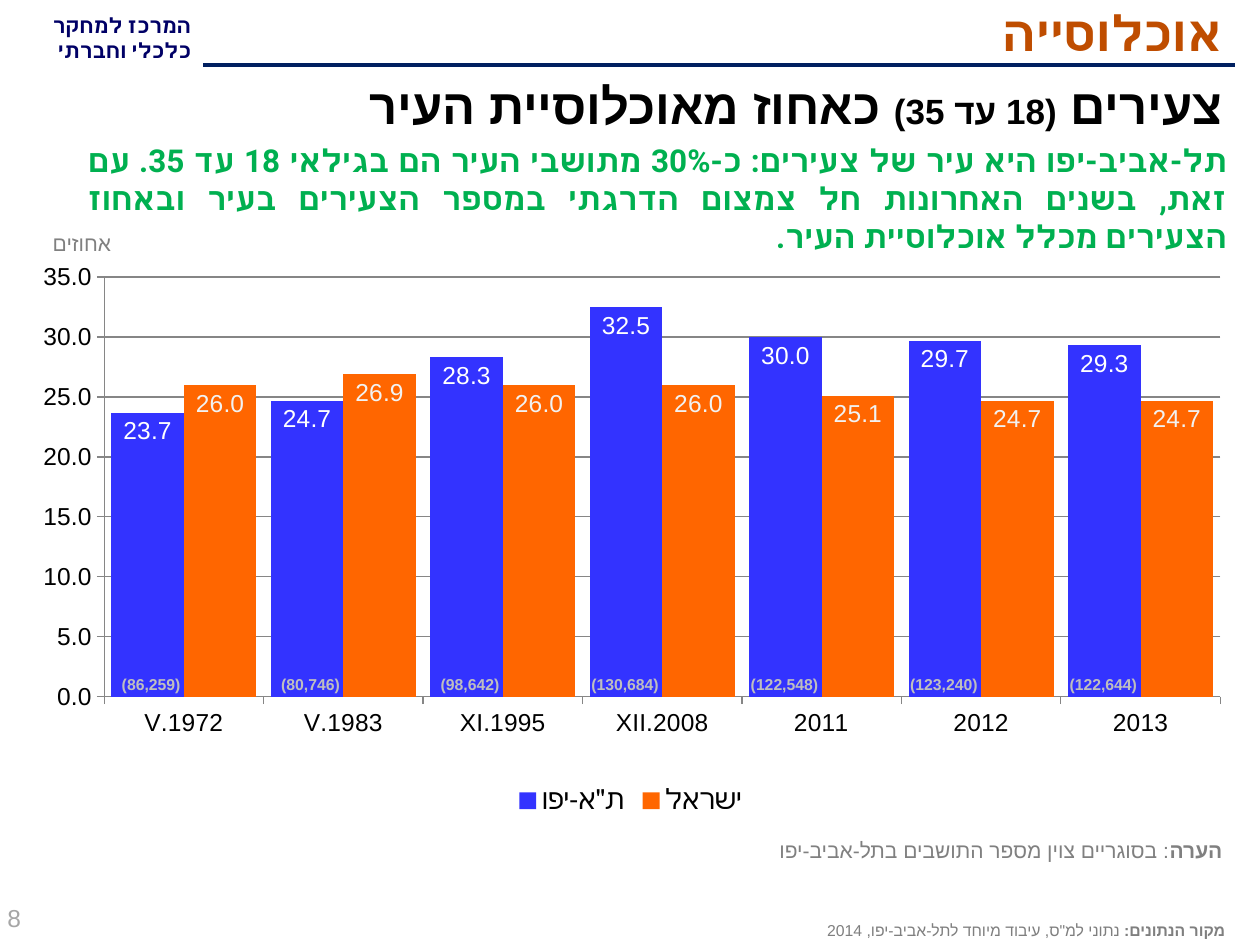
from dataclasses import dataclass

from lxml.etree import SubElement
from pptx import Presentation
from pptx.chart.data import CategoryChartData
from pptx.dml.color import RGBColor
from pptx.enum.chart import XL_CHART_TYPE, XL_LABEL_POSITION, XL_LEGEND_POSITION, XL_TICK_MARK
from pptx.enum.shapes import MSO_CONNECTOR
from pptx.enum.text import MSO_ANCHOR, PP_ALIGN
from pptx.oxml import parse_xml
from pptx.oxml.ns import nsdecls, qn
from pptx.util import Pt


@dataclass(frozen=True)
class Theme:
    body_font: str = "Arial"
    brand_font: str = "Roboto"
    black: str = "000000"
    white: str = "FFFFFF"
    navy: str = "000066"
    rule: str = "002060"
    title: str = "BF4D00"
    green: str = "00B050"
    city: str = "3333FF"
    country: str = "FF6600"
    country_label: str = "F2F2F2"
    count: str = "BFBFBF"
    note: str = "808080"
    source: str = "7F7F7F"
    page: str = "A6A6A6"
    axis: str = "868686"
    heading_size: int = 28
    range_size: int = 20
    message_size: int = 18
    legend_size: int = 16
    chart_size: int = 14
    note_size: int = 12
    small_size: int = 9


THEME = Theme()
PERIODS = ["V.1972", "V.1983", "XI.1995", "XII.2008", "2011", "2012", "2013"]
CITY_SHARES = [23.7, 24.7, 28.3, 32.5, 30, 29.7, 29.3]
COUNTRY_SHARES = [26, 26.9, 26, 26, 25.1, 24.7, 24.7]
CITY_COUNTS = ["(86,259)", "(80,746)", "(98,642)", "(130,684)",
               "(122,548)", "(123,240)", "(122,644)"]


def color(value):
    return RGBColor.from_string(value)


def set_font(font, size, value, name=THEME.body_font, bold=False):
    font.size, font.name, font.bold = Pt(size), name, bold
    font.color.rgb = color(value)


def add_text(slide, box, paragraphs, *, size, value, name=THEME.body_font,
             bold=False, align=PP_ALIGN.RIGHT, anchor=MSO_ANCHOR.TOP):
    """Each paragraph is a string or a list of (text, format overrides)."""
    shape = slide.shapes.add_textbox(*map(Pt, box))
    frame = shape.text_frame
    frame.word_wrap = True
    frame.vertical_anchor = anchor
    for index, content in enumerate(paragraphs):
        paragraph = frame.add_paragraph() if index else frame.paragraphs[0]
        paragraph.alignment = align
        paragraph._p.get_or_add_pPr().set("rtl", "1")
        runs = [(content, {})] if isinstance(content, str) else content
        for text, overrides in runs:
            run = paragraph.add_run()
            run.text = text
            style = {"size": size, "value": value, "name": name, "bold": bold, **overrides}
            set_font(run.font, **style)
            # Hebrew uses the complex script font
            SubElement(run.font._element, qn("a:cs")).set("typeface", style["name"])


def add_rule(slide, left, right, top):
    line = slide.shapes.add_connector(MSO_CONNECTOR.STRAIGHT, Pt(right), Pt(top), Pt(left), Pt(top))
    line.line.color.rgb = color(THEME.rule)
    line.line.width = Pt(2.25)
    SubElement(line._element.spPr, qn("a:effectLst"))


def format_axis(axis):
    axis.major_tick_mark = XL_TICK_MARK.OUTSIDE
    axis.minor_tick_mark = XL_TICK_MARK.NONE
    set_font(axis.tick_labels.font, THEME.chart_size, THEME.black)
    axis.format.line.color.rgb = color(THEME.axis)


def format_series(series, fill, label):
    series.format.fill.solid()
    series.format.fill.fore_color.rgb = color(fill)
    series.invert_if_negative = False
    labels = series.data_labels
    labels.show_value = True
    labels.position = XL_LABEL_POSITION.INSIDE_END
    labels.number_format, labels.number_format_is_linked = "0.0", False
    set_font(labels.font, THEME.chart_size, label)


def set_plot_layout(chart, x, y, w, h):
    modes = '<c:xMode val="edge"/><c:yMode val="edge"/>'
    sizes = "".join(f'<c:{key} val="{value}"/>' for key, value in zip("xywh", (x, y, w, h)))
    area = chart._chartSpace.chart.plotArea
    for layout in area.findall(qn("c:layout")):
        area.remove(layout)
    area.insert(0, parse_xml(
        f'<c:layout {nsdecls("c")}><c:manualLayout><c:layoutTarget val="inner"/>'
        f'{modes}{sizes}</c:manualLayout></c:layout>'))


def add_share_chart(slide, box):
    data = CategoryChartData(number_format="0.0")
    data.categories = PERIODS
    data.add_series('ת"א-יפו', CITY_SHARES)
    data.add_series("ישראל", COUNTRY_SHARES)
    chart = slide.shapes.add_chart(XL_CHART_TYPE.COLUMN_CLUSTERED, *map(Pt, box), data).chart
    set_font(chart.font, THEME.message_size, THEME.black)
    chart.has_title = False
    plot = chart.plots[0]
    plot.gap_width, plot.overlap, plot.vary_by_categories = 20, 0, False
    city, country = plot.series
    format_series(city, THEME.city, THEME.white)
    format_series(country, THEME.country, THEME.country_label)

    # Axes, legend and plot area
    format_axis(chart.category_axis)
    values = chart.value_axis
    format_axis(values)
    values.minimum_scale, values.maximum_scale, values.major_unit = 0, 35, 5
    values.tick_labels.number_format = "0.0"
    values.tick_labels.number_format_is_linked = False
    values.has_major_gridlines = True
    values.major_gridlines.format.line.color.rgb = color(THEME.axis)
    chart.has_legend = True
    chart.legend.position = XL_LEGEND_POSITION.BOTTOM
    chart.legend.include_in_layout = False
    set_font(chart.legend.font, THEME.legend_size, THEME.black)
    set_plot_layout(chart, 0.067, 0.04, 0.918, 0.742)


def add_counts(slide):
    first_left, step = 48.2, 91.1
    for index, count in enumerate(CITY_COUNTS):
        add_text(slide, (first_left + index * step, 381.8, 62, 18), [count],
                 size=THEME.small_size, value=THEME.count, bold=True)


def main():
    presentation = Presentation()
    presentation.slide_width, presentation.slide_height = Pt(720), Pt(540)
    slide = presentation.slides.add_slide(presentation.slide_layouts[6])

    # Header
    add_text(slide, (-14, 3.6, 130.3, 36.7), ["המרכז למחקר", "כלכלי וחברתי"],
             size=THEME.note_size, value=THEME.navy, name=THEME.brand_font, bold=True)
    add_rule(slide, 116, 705.6, 37.4)
    add_text(slide, (113.8, -2.2, 591.8, 39.6), ["אוכלוסייה"], size=THEME.heading_size,
             value=THEME.title, name=THEME.brand_font, bold=True)

    # Chart
    add_share_chart(slide, (13, 145.4, 694.8, 323.3))

    # Heading and main message
    add_text(slide, (43.2, 77, 665.3, 39.6),
             ["תל-אביב-יפו היא עיר של צעירים: כ-30% מתושבי העיר הם בגילאי 18 עד 35. "
              "עם זאת, בשנים האחרונות חל צמצום הדרגתי במספר הצעירים בעיר ובאחוז "
              "הצעירים מכלל אוכלוסיית העיר."],
             size=THEME.message_size, value=THEME.green, name=THEME.brand_font,
             bold=True, align=PP_ALIGN.JUSTIFY)
    add_text(slide, (6.5, 39.6, 699.1, 43.2),
             [[("צעירים ", {}), ("(18 עד 35)", {"size": THEME.range_size}),
               (" כאחוז מאוכלוסיית העיר", {})]],
             size=THEME.heading_size, value=THEME.black, bold=True)

    # Chart annotations
    add_counts(slide)
    add_text(slide, (-8.6, 128.2, 110.9, 21.6), ["אחוזים"], size=THEME.note_size,
             value=THEME.note, align=PP_ALIGN.CENTER)
    add_text(slide, (432.7, 475.2, 272.9, 21.6),
             [[("הערה", {"bold": True}), (": בסוגריים צוין מספר התושבים בתל-אביב-יפו", {})]],
             size=THEME.note_size, value=THEME.note)

    # Footer
    add_text(slide, (168.5, 522.7, 538.6, 17.3),
             [[("מקור הנתונים: ", {"bold": True}),
               ('נתוני למ"ס, עיבוד מיוחד לתל-אביב-יפו, 2014', {})]],
             size=THEME.small_size, value=THEME.source, anchor=MSO_ANCHOR.MIDDLE)
    add_text(slide, (-2.9, 508.3, 167.8, 31.7), ["8"], size=THEME.chart_size,
             value=THEME.page, align=PP_ALIGN.LEFT, anchor=MSO_ANCHOR.MIDDLE)

    presentation.save("out.pptx")


if __name__ == "__main__":
    main()
